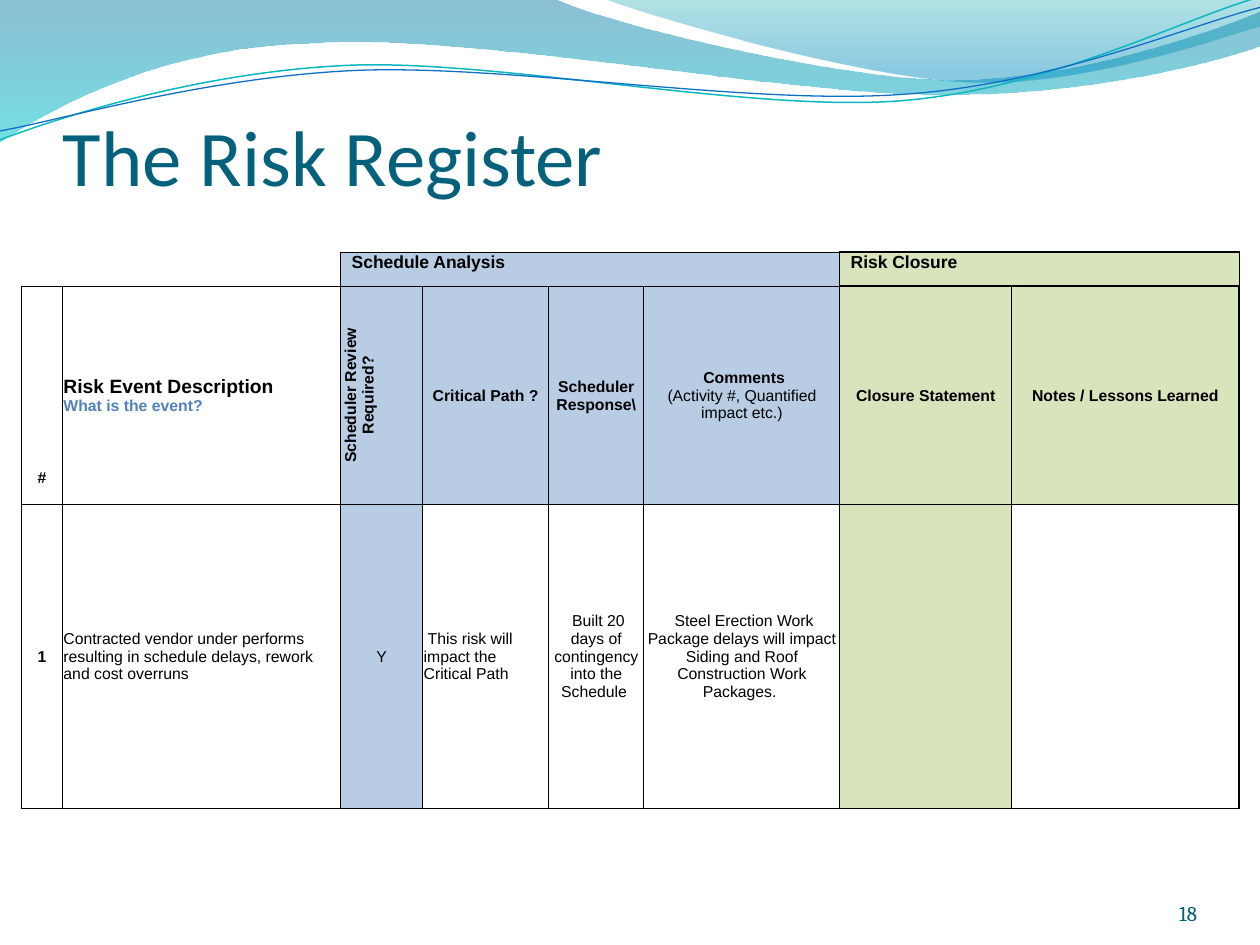
"""Build the risk register slide with its wave header and table."""
from itertools import chain
from lxml.etree import SubElement
from pptx import Presentation
from pptx.dml.color import RGBColor
from pptx.enum.text import MSO_ANCHOR, PP_ALIGN
from pptx.oxml import parse_xml
from pptx.oxml.ns import nsdecls, qn
from pptx.util import Cm, Pt

COLORS = {
    "title": "04617B", "number": "045D75", "text": "000000", "hint": "4F81BD",
    "schedule": "B8CCE4", "closure": "D8E4BC", "border": "000000",
    "deep": "0074A1", "aqua": "00C6CF", "teal": "00A1A9", "sky": "008BBF",
    "teal_line": "0AB8BF", "blue_line": "0F6FC6",
}
LEFT_WAVE = [
    [(0, 0)], [(11.18, -0.03)],
    [(12.09, 0.43), (16.87, 1.6), (19.25, 1.6)],
    [(21.67, 1.6), (24.33, 0.66), (25.4, 0.23)],
    [(25.43, 0.91)],
    [(24.97, 1.12), (22.1, 1.93), (18.95, 1.91)],
    [(15.8, 1.91), (9.7, 0.71), (6.53, 0.86)],
    [(3.28, 0.91), (1.17, 2.11), (-0.03, 2.87)],
    [(0, 0)],
]
RIGHT_WAVE = [
    [(12.17, -0.03)],
    [(12.93, 0.28), (17.32, 1.57), (19.53, 1.65)],
    [(21.74, 1.75), (24.41, 0.81), (25.4, 0.53)],
    [(25.4, 0)], [(12.17, -0.03)],
]
TEAL_CURVE = [
    [(-0.05, 2.22)],
    [(1.19, 1.82), (4.02, 1.04), (7.05, 1.05)],
    [(10.05, 1.07), (15.02, 2.37), (18.08, 2.29)],
    [(21.13, 2.2), (23.86, 0.91), (25.41, 0.55)],
]
BLUE_CURVE = [
    [(-0.04, 2.04)],
    [(1.16, 1.89), (4.17, 1.15), (7.2, 1.16)],
    [(10.25, 1.18), (15.13, 2.25), (18.19, 2.16)],
    [(21.21, 2.1), (23.93, 1.06), (25.45, 0.75)],
]
COLUMN_WIDTHS = [0.83, 5.61, 1.65, 2.54, 1.92, 3.95, 3.46, 4.59]
ROW_HEIGHTS = [0.69, 3.35, 6.12]
HEADINGS = [
    ["#", ""],
    ["Risk Event Description ", "What is the event?"],
    ["Scheduler Review Required?"],
    ["Critical Path ?"],
    ["Scheduler Response\\"],
    [" Comments", "(Activity #, Quantified impact etc.)"],
    ["Closure Statement"],
    ["Notes / Lessons Learned"],
]
RISK = [
    "1",
    "Contracted vendor under performs resulting in schedule delays, rework and cost overruns",
    "Y",
    " This risk will impact the Critical Path",
    " Built 20 days of contingency into the Schedule ",
    " Steel Erection Work Package delays will impact Siding and Roof Construction Work Packages. ",
    "", "",
]


def rgb(name):
    """Return the named colour."""
    return RGBColor.from_string(COLORS[name])


def style_font(font, face, size, color, bold=False):
    """Set the look of a paragraph or run font."""
    font.name, font.size, font.bold = face, Pt(size), bold
    font.color.rgb = rgb(color)


def add_outline(slide, segments, close):
    """Add a shadowless freeform whose three-point segments are cubic curves."""
    start, *rest = [(Cm(x), Cm(y)) for x, y in chain.from_iterable(segments)]
    builder = slide.shapes.build_freeform(*start)
    builder.add_line_segments(rest, close=close)
    outline = builder.convert_to_shape()
    outline.shadow.inherit = False
    edges = iter(list(outline._element.iter(qn("a:lnTo"))))
    for segment in segments[1:]:
        first, *others = [next(edges) for _ in segment]
        if others:
            first.tag = qn("a:cubicBezTo")
        for edge in others:
            first.append(edge[0])
            edge.getparent().remove(edge)
    return outline


def add_wave(slide, segments, stops):
    """Add a wave with a translucent vertical gradient."""
    wave = add_outline(slide, segments, True)
    wave.line.fill.background()
    wave.fill.gradient()
    wave.fill.gradient_angle = 270
    for stop, (position, color, _) in zip(wave.fill.gradient_stops, stops):
        stop.position = position
        stop.color.rgb = rgb(color)
    tints = wave._element.spPr.iter(qn("a:srgbClr"))
    for tint, (_, _, opacity) in zip(tints, stops):
        SubElement(tint, qn("a:alpha")).set("val", str(opacity * 1000))


def add_wave_line(slide, segments, color, width):
    """Add a thin, slightly turned open curve."""
    curve = add_outline(slide, segments, False)
    curve.rotation = 357.3
    curve.fill.background()
    curve.line.color.rgb = rgb(color)
    curve.line.width = Pt(width)


def add_label(slide, text, box, face, size, color, align=PP_ALIGN.LEFT, inset=0):
    """Add one line of bottom-anchored text."""
    label = slide.shapes.add_textbox(*map(Cm, box))
    frame = label.text_frame
    frame.word_wrap = True
    frame.vertical_anchor = MSO_ANCHOR.BOTTOM
    frame.margin_left = frame.margin_right = frame.margin_bottom = 0
    frame.margin_top = Cm(inset)
    paragraph = frame.paragraphs[0]
    paragraph.text = text
    paragraph.alignment = align
    style_font(paragraph.font, face, size, color)


def set_borders(cell, **widths):
    """Draw the given sides (L, R, T, B) and hide those of zero width."""
    for index, (side, width) in enumerate(widths.items()):
        paint = (f'<a:solidFill><a:srgbClr val="{COLORS["border"]}"/></a:solidFill>'
                 if width else "<a:noFill/>")
        edge = f'<a:ln{side} {nsdecls("a")} w="{Pt(width)}">{paint}</a:ln{side}>'
        cell._tc.get_or_add_tcPr().insert(index, parse_xml(edge))


def fill_cell(cell, lines, fill=None, size=9, bold=False, align=PP_ALIGN.CENTER,
              anchor=MSO_ANCHOR.MIDDLE, indent=0.02):
    """Set text, fill and margins of a cell."""
    cell.margin_left, cell.margin_right = Cm(indent), Cm(0.02)
    cell.margin_top, cell.margin_bottom = Cm(0.02), 0
    cell.vertical_anchor = anchor
    if fill:
        cell.fill.solid()
        cell.fill.fore_color.rgb = rgb(fill)
    else:
        cell.fill.background()
    paragraph = cell.text_frame.paragraphs[0]
    paragraph.text = "\v".join(lines)
    paragraph.alignment = align
    style_font(paragraph.font, "Arial", size, "text", bold)


def add_register(slide):
    """Add the risk register table."""
    register = slide.shapes.add_table(3, 8, Cm(0.43), Cm(5.08), Cm(24.55), Cm(10.16)).table
    register.first_row = register.horz_banding = False
    for column, width in zip(register.columns, COLUMN_WIDTHS):
        column.width = Cm(width)
    for row, height in zip(register.rows, ROW_HEIGHTS):
        row.height = Cm(height)
    groups = {2: ("Schedule Analysis", "schedule", 5), 6: ("Risk Closure", "closure", 7)}
    for col, (heading, note) in enumerate(zip(HEADINGS, RISK)):
        band = "closure" if col > 5 else "schedule" if col > 1 else None
        group, head, body = (register.cell(row, col) for row in range(3))
        title = groups[col][0] if col in groups else ""
        fill_cell(group, [title], band, 10, True, PP_ALIGN.LEFT, MSO_ANCHOR.TOP, 0.22)
        fill_cell(head, heading, band, bold=True,
                  align=PP_ALIGN.LEFT if col == 1 else PP_ALIGN.CENTER,
                  anchor=MSO_ANCHOR.BOTTOM if col == 0 else MSO_ANCHOR.MIDDLE)
        fill_cell(body, [note], band if col in (2, 6) else None, bold=col == 0,
                  align=PP_ALIGN.LEFT if col in (1, 3) else PP_ALIGN.CENTER)
        rule = 1 if col > 5 else 0.5
        right = 1 if col == 7 else 0.5
        set_borders(group, L=0.5 if col > 1 else 0, R=0.5 if col else 0,
                    T=rule if col > 1 else 0, B=rule)
        set_borders(head, L=0.5, R=right, T=rule, B=0.5)
        set_borders(body, L=0.5, R=right, T=0.5, B=0.5)
    for first, (_, _, last) in groups.items():
        register.cell(0, first).merge(register.cell(0, last))
    register.cell(1, 2)._tc.get_or_add_tcPr().set("vert", "vert270")
    event, hint = register.cell(1, 1).text_frame.paragraphs[0].runs
    event.font.size = Pt(11)
    hint.font.color.rgb = rgb("hint")
    register.cell(1, 5).text_frame.paragraphs[0].runs[1].font.bold = False


def main():
    """Build and save the slide."""
    deck = Presentation()
    deck.slide_width, deck.slide_height = Cm(25.4), Cm(19.05)
    slide = deck.slides.add_slide(deck.slide_layouts[6])
    add_wave(slide, LEFT_WAVE, [(0, "deep", 45), (1, "aqua", 55)])
    add_wave(slide, RIGHT_WAVE, [(0, "teal", 30), (0.8, "sky", 45)])
    add_wave_line(slide, TEAL_CURVE, "teal_line", 0.85)
    add_wave_line(slide, BLUE_CURVE, "blue_line", 0.75)
    add_label(slide, "The Risk Register", (1.27, 2.11, 22.86, 1.96), "Calibri", 45, "title",
              inset=0.13)
    add_label(slide, "18", (22.02, 17.65, 2.11, 1.02), "Cambria", 12, "number", PP_ALIGN.RIGHT)
    add_register(slide)
    deck.save("out.pptx")


if __name__ == "__main__":
    main()
